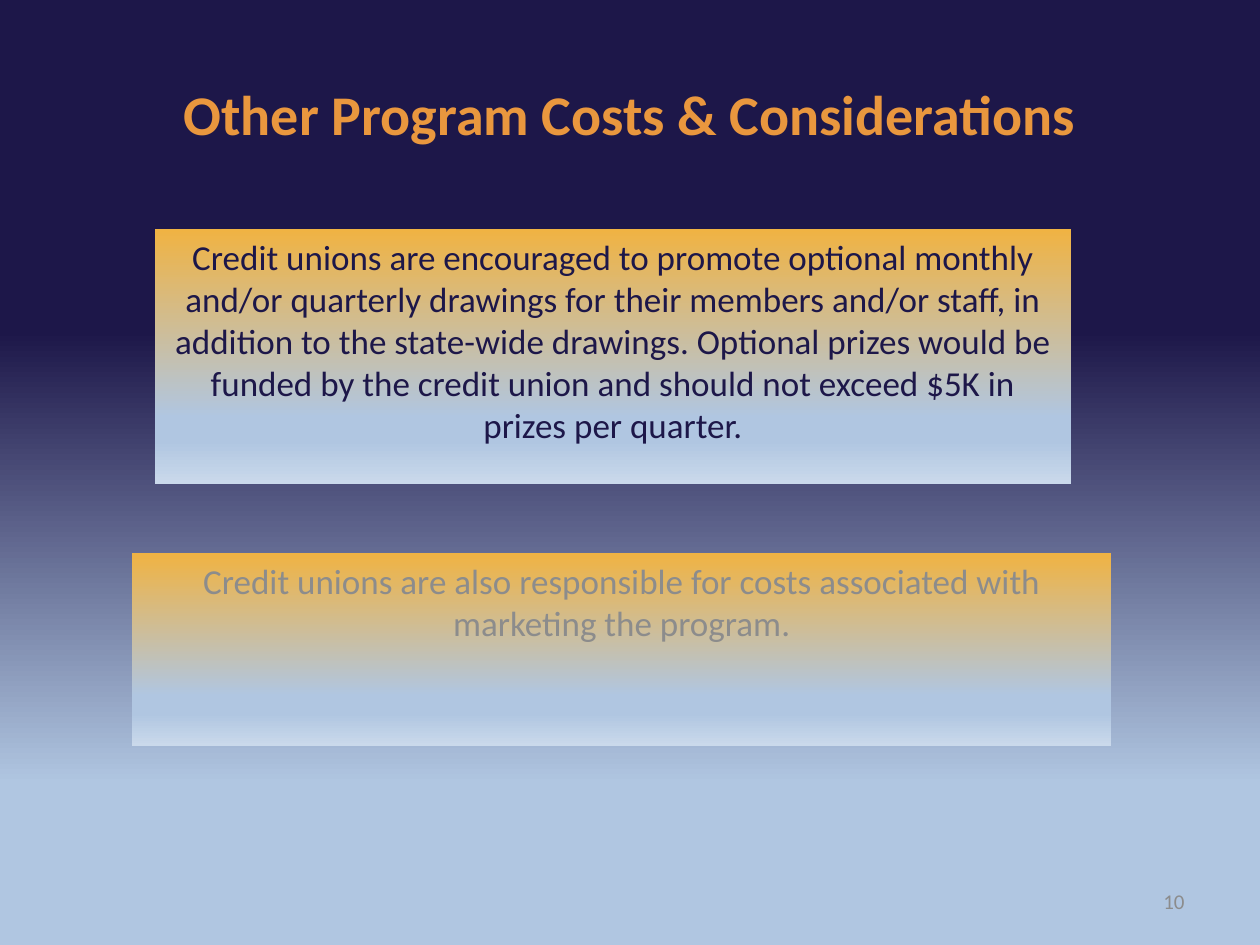
import pptx
import pptx.dml.color
import pptx.enum.shapes
import pptx.enum.text
import pptx.oxml.ns
import pptx.util
from lxml import etree

RGB = pptx.dml.color.RGBColor
ALIGN = pptx.enum.text.PP_ALIGN
ANCHOR = pptx.enum.text.MSO_ANCHOR

NAVY = RGB(0x1D, 0x17, 0x49)
ORANGE = RGB(0xE9, 0x97, 0x3E)
GOLD = RGB(0xF0, 0xB3, 0x43)
SKY = RGB(0xB0, 0xC6, 0xE1)
PALE = RGB(0xCA, 0xD9, 0xEB)
GRAY = RGB(0x8C, 0x8C, 0x8C)

BACKDROP = [(35, NAVY), (83, SKY), (100, SKY), (100, PALE)]
PANEL = [(0, GOLD), (74, SKY), (83, SKY), (100, PALE)]


class Deck:
    font_name = "Calibri"

    def __init__(self, width, height):
        self.presentation = pptx.Presentation()
        self.presentation.slide_width = pptx.util.Inches(width)
        self.presentation.slide_height = pptx.util.Inches(height)
        self.slide = None

    def add_slide(self, stops):
        self.slide = self.presentation.slides.add_slide(self.presentation.slide_layouts[6])
        self.shade(self.slide.background.fill, self.slide.element, stops)

    def shade(self, fill, owner, stops):
        """Fill from top to bottom with (percent, colour) stops."""
        fill.gradient()
        fill.gradient_angle = 270
        qn = pptx.oxml.ns.qn
        stop_list = next(owner.iter(qn("a:gsLst")))
        for stop in list(stop_list):
            stop_list.remove(stop)
        for percent, color in stops:
            stop = etree.SubElement(stop_list, qn("a:gs"), pos=str(percent * 1000))
            etree.SubElement(stop, qn("a:srgbClr"), val=str(color))

    def place(self, left, top, width, height):
        """Turn shares of the slide's size into lengths."""
        across, down = self.presentation.slide_width, self.presentation.slide_height
        return int(left * across), int(top * down), int(width * across), int(height * down)

    def set_text(self, shape, text, size, color, align, anchor, bold=False):
        frame = shape.text_frame
        frame.word_wrap = True
        frame.vertical_anchor = anchor
        paragraph = frame.paragraphs[0]
        paragraph.text = text
        paragraph.alignment = align
        font = paragraph.font
        font.name, font.size, font.bold = self.font_name, pptx.util.Pt(size), bold
        font.color.rgb = color

    def label(self, area, text, size, color, align, bold=False):
        box = self.slide.shapes.add_textbox(*self.place(*area))
        self.set_text(box, text, size, color, align, ANCHOR.MIDDLE, bold)

    def panel(self, area, text, color):
        box = self.slide.shapes.add_shape(
            pptx.enum.shapes.MSO_SHAPE.RECTANGLE, *self.place(*area))
        box.shadow.inherit = False
        box.line.fill.background()
        self.shade(box.fill, box.element, PANEL)
        self.set_text(box, text, 20, color, ALIGN.CENTER, ANCHOR.TOP)


def main():
    deck = Deck(10, 7.5)
    deck.add_slide(BACKDROP)
    deck.label((0.08, 0.04, 0.84, 0.16), "Other Program Costs & Considerations",
               32, ORANGE, ALIGN.CENTER, bold=True)
    deck.panel((1.23 / 10, 1.82 / 7.5, 7.27 / 10, 2.02 / 7.5),
               "Credit unions are encouraged to promote optional monthly and/or quarterly "
               "drawings for their members and/or staff, in addition to the state-wide "
               "drawings. Optional prizes would be funded by the credit union and should "
               "not exceed $5K in prizes per quarter.", NAVY)
    deck.label((7.17 / 10, 6.95 / 7.5, 2.33 / 10, 0.4 / 7.5), "10", 12, GRAY, ALIGN.RIGHT)
    deck.panel((1.05 / 10, 4.39 / 7.5, 7.77 / 10, 1.53 / 7.5),
               "Credit unions are also responsible for costs associated with marketing "
               "the program.", GRAY)
    deck.presentation.save("out.pptx")


if __name__ == "__main__":
    main()
